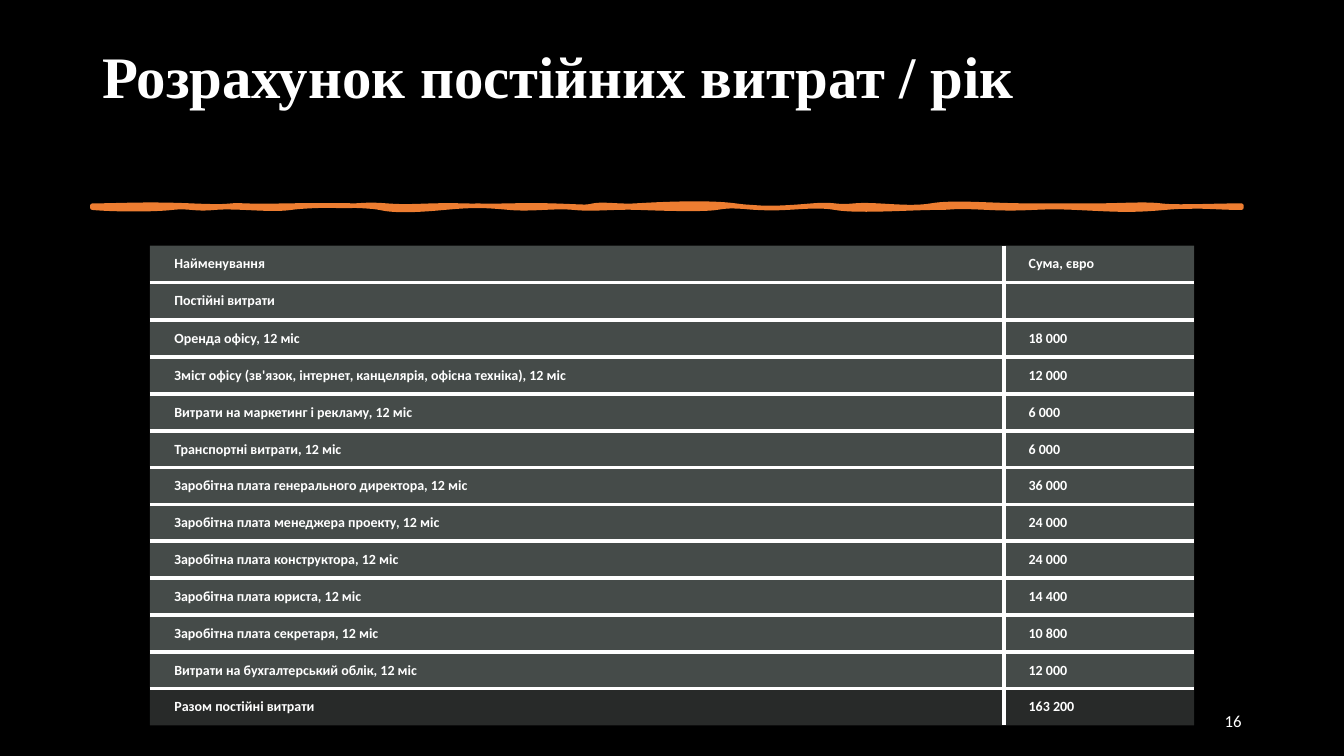
from dataclasses import dataclass

from lxml import etree
from pptx import Presentation
from pptx import util as u
from pptx.dml.color import RGBColor
from pptx.enum import text
from pptx.oxml import ns


@dataclass(frozen=True)
class Theme:
    background: str = "000000"
    ink: str = "FFFFFF"
    accent: str = "ED7D31"
    row: str = "636B68"
    row_opacity: int = 70
    total: str = "878E8B"
    total_opacity: int = 30
    title_font: str = "Times New Roman"
    body_font: str = "Calibri"
    title_size: float = 42
    number_size: float = 12
    cell_size: float = 10
    border_width: float = 3
    stroke_width: float = 3.25


@dataclass(frozen=True)
class Box:
    left: float
    top: float
    width: float
    height: float

    def lengths(self):
        return [u.Pt(n) for n in (self.left, self.top, self.width, self.height)]


THEME = Theme()
PLAIN_TABLE_STYLE = "{2D5ABB26-0587-4C30-8999-92F81FD0307C}"

COSTS = [
    ("Найменування", "Сума, євро"),
    ("Постійні витрати", ""),
    ("Оренда офісу, 12 міс", "18 000"),
    ("Зміст офісу (зв'язок, інтернет, канцелярія, офісна техніка), 12 міс", "12 000"),
    ("Витрати на маркетинг і рекламу, 12 міс", "6 000"),
    ("Транспортні витрати, 12 міс", "6 000"),
    ("Заробітна плата генерального директора, 12 міс", "36 000"),
    ("Заробітна плата менеджера проекту, 12 міс", "24 000"),
    ("Заробітна плата конструктора, 12 міс", "24 000"),
    ("Заробітна плата юриста, 12 міс", "14 400"),
    ("Заробітна плата секретаря, 12 міс", "10 800"),
    ("Витрати на бухгалтерський облік, 12 міс", "12 000"),
    ("Разом постійні витрати", "163 200"),
]

# Cubic curves of the brush stroke: a start, then two handles and an end each.
STROKE_UNIT = 0.72
STROKE_OUTLINE = [
    (0, 0), (27, 0), (52, -2), (98, 0), (145, 2), (128, -1), (152, 0),
    (175, 1), (211, -1), (239, 0), (268, 1), (267, -2), (292, 0),
    (318, 2), (331, -1), (368, 0), (406, 1), (422, -1), (456, 0),
    (489, 1), (489, 2), (497, 0), (506, -2), (523, 1), (539, 0),
    (555, -1), (609, -4), (638, 0), (667, 4), (689, 2), (714, 0),
    (739, -2), (735, 2), (756, 0), (776, -2), (809, 4), (832, 0),
    (855, -4), (890, 0), (931, 0), (971, 0), (971, 0), (995, 0),
    (1020, 0), (1044, -2), (1060, 0), (1076, 2), (1111, 0), (1140, 0),
    (1140, 1), (1140, 1), (1140, 2),
    (1113, 2), (1097, -1), (1064, 2), (1030, 5), (1018, 4), (976, 2),
    (935, 0), (931, 4), (889, 2), (847, 0), (860, 2), (836, 2),
    (812, 2), (759, 6), (737, 2), (714, -2), (690, 4), (661, 2),
    (632, 0), (633, 0), (619, 2), (606, 4), (569, 3), (543, 2),
    (517, 1), (498, 4), (478, 2), (459, 0), (436, 4), (414, 2),
    (391, 0), (381, -1), (349, 2), (317, 5), (298, 5), (285, 2),
    (271, -1), (218, -1), (197, 2), (176, 5), (143, 0), (121, 2),
    (100, 4), (97, 0), (79, 2), (62, 4), (22, 4), (0, 2),
    (0, 1), (0, 1), (0, 0),
]


def color(value):
    return RGBColor.from_string(value)


def set_font(para, name, size, bold=False):
    para.font.name = name
    para.font.size = u.Pt(size)
    para.font.bold = bold
    para.font.color.rgb = color(THEME.ink)


def add_text(page, box, words, anchor):
    frame = page.shapes.add_textbox(*box.lengths()).text_frame
    frame.word_wrap = True
    frame.vertical_anchor = anchor
    para = frame.paragraphs[0]
    para.text = words
    return frame, para


def add_title(page, box):
    frame, para = add_text(page, box, "Розрахунок постійних витрат / рік",
                           text.MSO_ANCHOR.TOP)
    frame.margin_top = u.Pt(5)
    para.line_spacing = 0.9
    set_font(para, THEME.title_font, THEME.title_size, bold=True)


def add_page_number(page, box):
    _, para = add_text(page, box, "16", text.MSO_ANCHOR.MIDDLE)
    para.alignment = text.PP_ALIGN.RIGHT
    set_font(para, THEME.body_font, THEME.number_size)


def bend_segments(shape, points):
    """Replace the straight segments of a freeform with cubic curves."""
    lines = list(shape._element.iter(ns.qn("a:lnTo")))
    for index, line in enumerate(lines):
        curve = etree.Element(ns.qn("a:cubicBezTo"))
        for x, y in points[3 * index + 1:3 * index + 4]:
            etree.SubElement(curve, ns.qn("a:pt"), x=str(u.Pt(x * STROKE_UNIT)),
                             y=str(u.Pt(y * STROKE_UNIT)))
        line.getparent().replace(line, curve)


def add_brush_stroke(page, left, top):
    anchors = [(u.Pt(left + x * STROKE_UNIT), u.Pt(top + y * STROKE_UNIT))
               for x, y in STROKE_OUTLINE[::3]]
    builder = page.shapes.build_freeform(*anchors[0])
    builder.add_line_segments(anchors[1:], close=True)
    stroke = builder.convert_to_shape()
    bend_segments(stroke, STROKE_OUTLINE)
    stroke.shadow.inherit = False
    stroke.fill.solid()
    stroke.fill.fore_color.rgb = color(THEME.accent)
    stroke.line.color.rgb = color(THEME.accent)
    stroke.line.width = u.Pt(THEME.stroke_width)


def add_border(cell, side):
    line = etree.SubElement(cell._tc.get_or_add_tcPr(), ns.qn(f"a:ln{side}"),
                            w=str(u.Pt(THEME.border_width)))
    fill = etree.SubElement(line, ns.qn("a:solidFill"))
    etree.SubElement(fill, ns.qn("a:srgbClr"), val=THEME.ink)


def fill_cell(cell, value, opacity):
    cell.fill.solid()
    cell.fill.fore_color.rgb = color(value)
    tint = cell._tc.tcPr.find(ns.qn("a:solidFill"))[0]
    etree.SubElement(tint, ns.qn("a:alpha"), val=str(opacity * 1000))


def write_cell(cell, words, space_before):
    cell.margin_left = u.Pt(11)
    cell.margin_right = cell.margin_top = cell.margin_bottom = u.Pt(6.5)
    para = cell.text_frame.paragraphs[0]
    para.text = words
    para.line_spacing = u.Pt(12.8)
    para.space_before = u.Pt(space_before)
    para._p.get_or_add_pPr().set("marL", str(u.Pt(6.5)))
    set_font(para, THEME.body_font, THEME.cell_size, bold=True)


def add_cost_table(page, box):
    last = len(COSTS) - 1
    table = page.shapes.add_table(len(COSTS), 2, *box.lengths()).table
    table.first_row = table.horz_banding = False
    table._tbl.tblPr.find(ns.qn("a:tableStyleId")).text = PLAIN_TABLE_STYLE
    amount_width = 135.7
    table.columns[0].width = u.Pt(box.width - amount_width)
    table.columns[1].width = u.Pt(amount_width)
    subheading_height = 27
    row_height = (box.height - subheading_height) / last
    for row, values in enumerate(COSTS):
        table.rows[row].height = u.Pt(subheading_height if row == 1 else row_height)
        for column, words in enumerate(values):
            cell = table.cell(row, column)
            add_border(cell, "L" if column else "R")
            if row > 0:
                add_border(cell, "T")
            if row < last:
                add_border(cell, "B")
            if row == last:
                fill_cell(cell, THEME.total, THEME.total_opacity)
            else:
                fill_cell(cell, THEME.row, THEME.row_opacity)
            write_cell(cell, words, 2 if row == last else 1.1)


def main():
    deck = Presentation()
    deck.slide_width, deck.slide_height = u.Pt(960), u.Pt(540)
    page = deck.slides.add_slide(deck.slide_layouts[6])
    page.background.fill.solid()
    page.background.fill.fore_color.rgb = color(THEME.background)
    add_title(page, Box(66, 28.75, 828, 104.4))
    add_brush_stroke(page, 66, 146.9)
    add_cost_table(page, Box(107.1, 175.5, 745.9, 342.9))
    add_page_number(page, Box(678, 500.5, 216, 28.75))
    deck.save("out.pptx")


if __name__ == "__main__":
    main()
